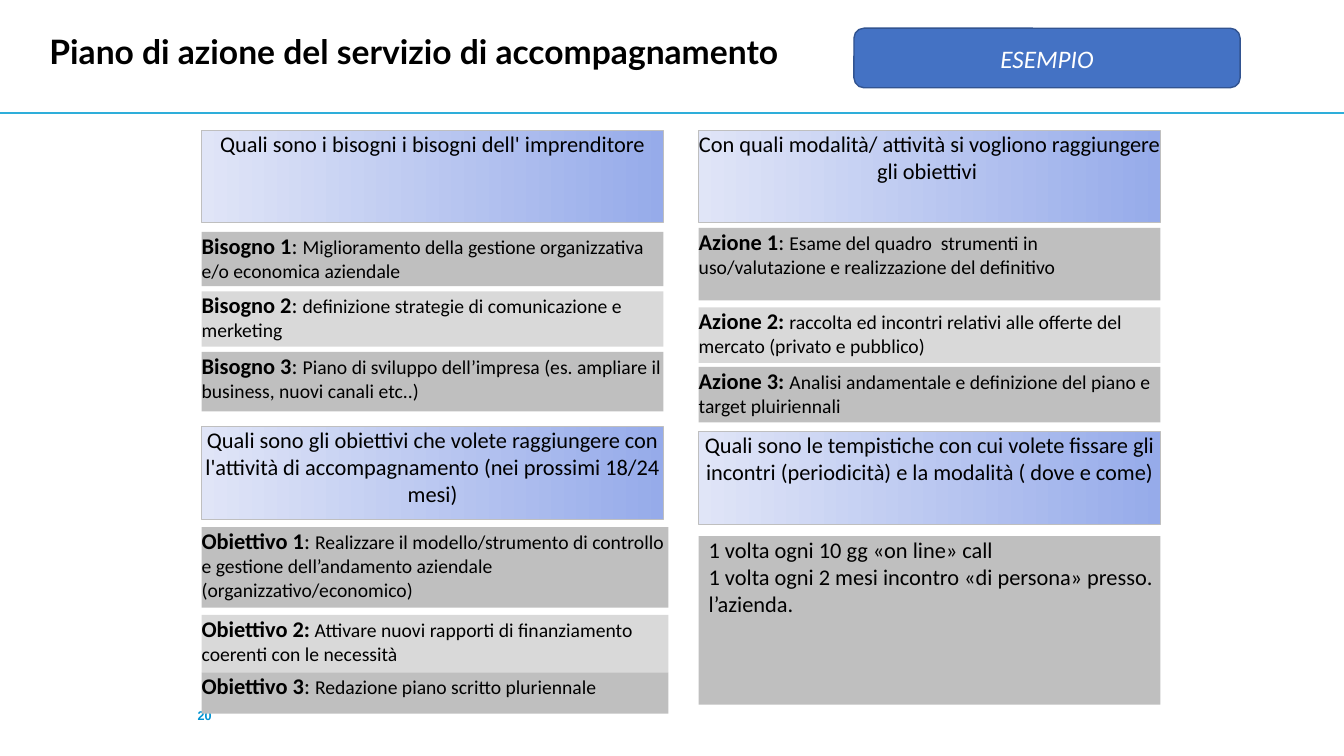
from pptx import Presentation
from pptx import util as u
from pptx.dml.color import RGBColor
from pptx.enum import shapes, text
from pptx.oxml import xmlchemy

BLACK = RGBColor(0x00, 0x00, 0x00)
WHITE = RGBColor(0xFF, 0xFF, 0xFF)
GREY = RGBColor(0xBF, 0xBF, 0xBF)
LIGHT_GREY = RGBColor(0xD9, 0xD9, 0xD9)
GRADIENT_LEFT = RGBColor(0xE0, 0xE5, 0xF7)
GRADIENT_RIGHT = RGBColor(0x96, 0xAB, 0xEA)
CYAN = RGBColor(0x2E, 0xAE, 0xDA)
NUMBER_BLUE = RGBColor(0x00, 0x92, 0xD1)
BADGE_BLUE = RGBColor(0x44, 0x72, 0xC4)
BADGE_LINE = RGBColor(0x32, 0x54, 0x91)

LEFT, RIGHT = 2, 6.93
WIDTH, GOAL_WIDTH = 4.58, 4.63
QUESTION_HEIGHT = 0.92

# Left, top, question
QUESTIONS = [
    (LEFT, 4.23, "Quali sono gli obiettivi che volete raggiungere con l'attività "
                 "di accompagnamento (nei prossimi 18/24 mesi)"),
    (LEFT, 1.29, "Quali sono i bisogni i bisogni dell' imprenditore"),
    (RIGHT, 1.29, "Con quali modalità/ attività si vogliono raggiungere gli obiettivi "),
    (RIGHT, 4.28, "Quali sono le tempistiche con cui volete fissare gli incontri "
                  "(periodicità) e la modalità ( dove e come)"),
]

# Left, width, then per row: top, height, bold label, 16 pt separator, 14 pt answer
ANSWERS = [
    (LEFT, WIDTH, [
        (2.3, 0.54, "Bisogno 1", ": ",
         "Miglioramento della gestione organizzativa e/o economica aziendale"),
        (2.89, 0.55, "Bisogno 2", ": ",
         "definizione strategie di comunicazione e merketing"),
        (3.49, 0.59, "Bisogno 3", ": ",
         "Piano di sviluppo dell’impresa (es. ampliare il business, nuovi canali etc..)"),
    ]),
    (LEFT, GOAL_WIDTH, [
        (5.23, 0.8, "Obiettivo 1", ": ",
         "Realizzare il modello/strumento di controllo e gestione "
         "dell’andamento aziendale (organizzativo/economico)"),
        (6.1, 0.57, "Obiettivo 2:", "",
         " Attivare nuovi rapporti di finanziamento coerenti con le necessità"),
        (6.67, 0.41, "Obiettivo 3", ": ", "Redazione piano scritto pluriennale"),
    ]),
    (RIGHT, WIDTH, [
        (2.26, 0.72, "Azione 1", ": ",
         "Esame del quadro  strumenti in uso/valutazione e realizzazione del definitivo"),
        (3.05, 0.55, "Azione 2: ", "",
         "raccolta ed incontri relativi alle offerte del mercato (privato e pubblico)"),
        (3.64, 0.55, "Azione 3: ", "",
         "Analisi andamentale e definizione del piano e target pluiriennali"),
    ]),
]

SCHEDULE = ("1 volta ogni 10 gg «on line» call\n"
            "1 volta ogni 2 mesi incontro «di persona» presso.\n"
            "l’azienda.")


def format_run(run, size, color=BLACK, name="Calibri", bold=False, italic=False):
    font = run.font
    font.name, font.size, font.color.rgb = name, u.Pt(size), color
    font.bold, font.italic = bold, italic


def write(frame, content, size, alignment=text.PP_ALIGN.LEFT, **style):
    frame.text = content
    for paragraph in frame.paragraphs:
        paragraph.alignment = alignment
        for run in paragraph.runs:
            format_run(run, size, **style)


def clear_margins(frame):
    frame.margin_left = frame.margin_right = frame.margin_top = frame.margin_bottom = 0


def add_box(slide, left, top, width, height, fill=None, line=None, line_width=0.75,
            kind=shapes.MSO_SHAPE.RECTANGLE):
    shape = slide.shapes.add_shape(kind, u.Inches(left), u.Inches(top),
                                   u.Inches(width), u.Inches(height))
    shape.shadow.inherit = False
    if fill is not None:
        shape.fill.solid()
        shape.fill.fore_color.rgb = fill
    if line is None:
        shape.line.fill.background()
    else:
        shape.line.color.rgb = line
        shape.line.width = u.Pt(line_width)
    shape.text_frame.word_wrap = True
    return shape


def add_panel(slide, *place, **look):
    """A box whose text starts at its top left corner."""
    shape = add_box(slide, *place, **look)
    clear_margins(shape.text_frame)
    shape.text_frame.vertical_anchor = text.MSO_ANCHOR.TOP
    return shape


def add_question(slide, left, top, question):
    shape = add_panel(slide, left, top, WIDTH, QUESTION_HEIGHT, line=GREY)
    shape.fill.gradient()
    shape.fill.gradient_angle = 0
    for stop, color in zip(shape.fill.gradient_stops, (GRADIENT_LEFT, GRADIENT_RIGHT)):
        stop.color.rgb = color
    write(shape.text_frame, question, 16, text.PP_ALIGN.CENTER)


def add_answer(slide, left, width, row, fill):
    top, height, label, separator, answer = row
    shape = add_panel(slide, left, top, width, height, fill=fill)
    paragraph = shape.text_frame.paragraphs[0]
    paragraph.alignment = text.PP_ALIGN.LEFT
    for content, size, bold in ((label, 16, True), (separator, 16, False), (answer, 14, False)):
        if content:
            run = paragraph.add_run()
            run.text = content
            format_run(run, size, bold=bold)


def add_header(slide):
    rule = slide.shapes.add_connector(shapes.MSO_CONNECTOR.STRAIGHT, 0, u.Inches(1.12),
                                      u.Inches(13.33), u.Inches(1.12))
    rule.line.color.rgb = CYAN
    rule.line.width = u.Pt(1.5)
    rule._element.spPr.append(xmlchemy.OxmlElement("a:effectLst"))

    title = slide.shapes.title
    title.left, title.top = u.Inches(0.39), u.Inches(0)
    title.width, title.height = u.Inches(12.6), u.Inches(1.1)
    title.text_frame.vertical_anchor = text.MSO_ANCHOR.MIDDLE
    write(title.text_frame, "Piano di azione del servizio di accompagnamento", 24,
          name="Lato", bold=True)
    title.text_frame.paragraphs[0].line_spacing = u.Pt(22)


def add_slide_number(slide):
    box = slide.shapes.add_textbox(u.Inches(1.96), u.Inches(6.91), u.Inches(0.3), u.Inches(0.38))
    frame = box.text_frame
    frame.word_wrap = True
    clear_margins(frame)
    frame.vertical_anchor = text.MSO_ANCHOR.MIDDLE
    write(frame, "20", 9, color=NUMBER_BLUE, name="Arial", bold=True)


def main():
    presentation = Presentation()
    presentation.slide_width, presentation.slide_height = u.Inches(13.33), u.Inches(7.5)
    slide = presentation.slides.add_slide(presentation.slide_layouts[5])

    add_header(slide)
    add_slide_number(slide)

    # Questions and their answers, in alternating greys
    for question in QUESTIONS:
        add_question(slide, *question)
    for left, width, rows in ANSWERS:
        for row, fill in zip(rows, (GREY, LIGHT_GREY, GREY)):
            add_answer(slide, left, width, row, fill)

    # Meeting schedule
    schedule = add_panel(slide, RIGHT, 5.32, WIDTH, 1.67, fill=GREY)
    schedule.text_frame.margin_left = u.Inches(0.1)
    write(schedule.text_frame, SCHEDULE, 16)

    # Example badge
    badge = add_box(slide, 8.47, 0.28, 3.83, 0.59, fill=BADGE_BLUE, line=BADGE_LINE,
                    line_width=1, kind=shapes.MSO_SHAPE.ROUNDED_RECTANGLE)
    badge.text_frame.vertical_anchor = text.MSO_ANCHOR.MIDDLE
    write(badge.text_frame, "ESEMPIO", 18, text.PP_ALIGN.CENTER, color=WHITE, italic=True)

    presentation.save("out.pptx")


if __name__ == "__main__":
    main()
